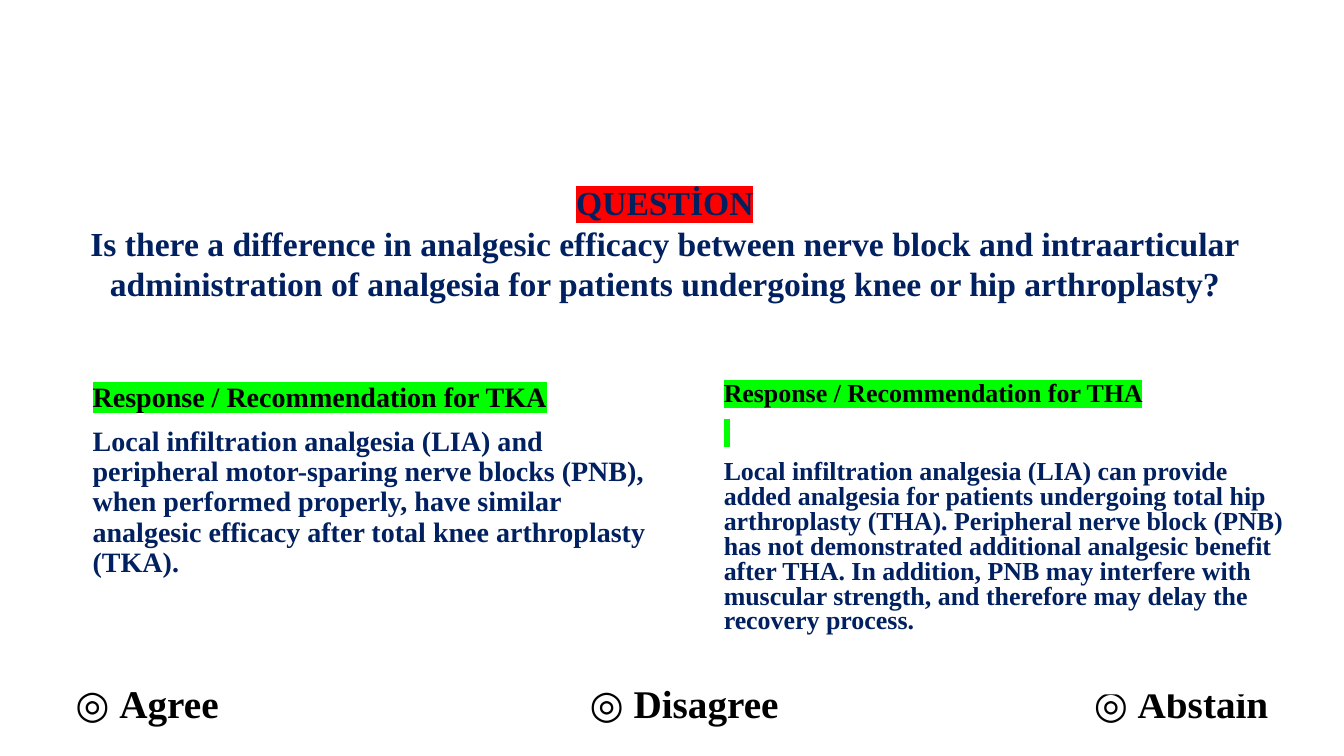
from lxml.etree import SubElement
from pptx import Presentation
from pptx.dml.color import RGBColor
from pptx.enum.shapes import MSO_SHAPE
from pptx.enum.text import MSO_ANCHOR, MSO_AUTO_SIZE, PP_ALIGN
from pptx.oxml import parse_xml
from pptx.oxml.ns import nsdecls, qn
from pptx.util import Inches, Pt

NAVY, BLACK, WHITE = "002060", "000000", "FFFFFF"
RED, GREEN = "FF0000", "00FF00"


def color(code):
    return RGBColor.from_string(code)


def add_span(para, text, size, code=BLACK, bold=True, highlight=None):
    span = para.add_run()
    span.text = text
    span.font.name = "Times New Roman"
    span.font.size = Pt(size)
    span.font.bold = bold
    span.font.color.rgb = color(code)
    if highlight:
        fill = span.font._element.find(qn("a:solidFill"))
        fill.addnext(parse_xml(
            f'<a:highlight {nsdecls("a")}><a:srgbClr val="{highlight}"/></a:highlight>'))


deck = Presentation()
deck.slide_width, deck.slide_height = Inches(13.33), Inches(7.5)
page = deck.slides.add_slide(deck.slide_layouts[6])

# Question
box = page.shapes.add_textbox(Inches(-0.07), Inches(1.76), deck.slide_width, Inches(1.31))
frame = box.text_frame
frame.word_wrap = True
frame.auto_size = MSO_AUTO_SIZE.SHAPE_TO_FIT_TEXT
question = [
    ("QUESTİON", RED),
    ("Is there a difference in analgesic efficacy between nerve block and intraarticular "
     "administration of analgesia for patients undergoing knee or hip arthroplasty?", None),
]
for index, (text, highlight) in enumerate(question):
    para = frame.add_paragraph() if index else frame.paragraphs[0]
    para.alignment = PP_ALIGN.CENTER
    add_span(para, text, 24, NAVY, highlight=highlight)

# Voting options, spaced by tab stops
options_left = 0.65
box = page.shapes.add_textbox(Inches(options_left), Inches(6.69),
                              deck.slide_width - Inches(options_left), Inches(0.57))
box.text_frame.word_wrap = True
box.text_frame.auto_size = MSO_AUTO_SIZE.SHAPE_TO_FIT_TEXT
para = box.text_frame.paragraphs[0]
tabs = SubElement(para._p.get_or_add_pPr(), qn("a:tabLst"))
for stop in (5.1, 10.1):
    SubElement(tabs, qn("a:tab"), pos=str(Inches(stop)), algn="l")
for mark, option in (("◎ ", "Agree"), ("\t◎ ", "Disagree"), ("\t◎ ", "Abstain")):
    add_span(para, mark, 28, bold=False)
    add_span(para, option, 28)

# Two response panels: left, height, size, line spacing, paragraphs
panels = [
    (0.82, 2.97, 20, 0.9, [
        ("Response / Recommendation for TKA", BLACK, GREEN),
        ("Local infiltration analgesia (LIA) and peripheral motor-sparing nerve blocks (PNB), "
         "when performed properly, have similar analgesic efficacy after total knee "
         "arthroplasty (TKA).", NAVY, None),
    ]),
    (7.08, 3.14, 18.5, 0.8, [
        ("Response / Recommendation for THA", BLACK, GREEN),
        (" ", BLACK, GREEN),  # no-break space carrying the green mark
        ("Local infiltration analgesia (LIA) can provide added analgesia for patients "
         "undergoing total hip arthroplasty (THA). Peripheral nerve block (PNB) has not "
         "demonstrated additional analgesic benefit after THA. In addition, PNB may interfere "
         "with muscular strength, and therefore may delay the recovery process.", NAVY, None),
    ]),
]
for left, height, size, spacing, paragraphs in panels:
    panel = page.shapes.add_shape(MSO_SHAPE.RECTANGLE, Inches(left), Inches(3.75),
                                  Inches(5.78), Inches(height))
    panel.shadow.inherit = False
    panel.fill.solid()
    panel.fill.fore_color.rgb = color(WHITE)
    panel.line.fill.background()
    frame = panel.text_frame
    frame.word_wrap = True
    frame.vertical_anchor = MSO_ANCHOR.TOP
    for index, (text, code, highlight) in enumerate(paragraphs):
        para = frame.add_paragraph() if index else frame.paragraphs[0]
        para.alignment = PP_ALIGN.LEFT
        para.line_spacing = spacing
        para.space_before = Pt(10 if index else 0)
        add_span(para, text, size, code, highlight=highlight)

deck.save("out.pptx")
